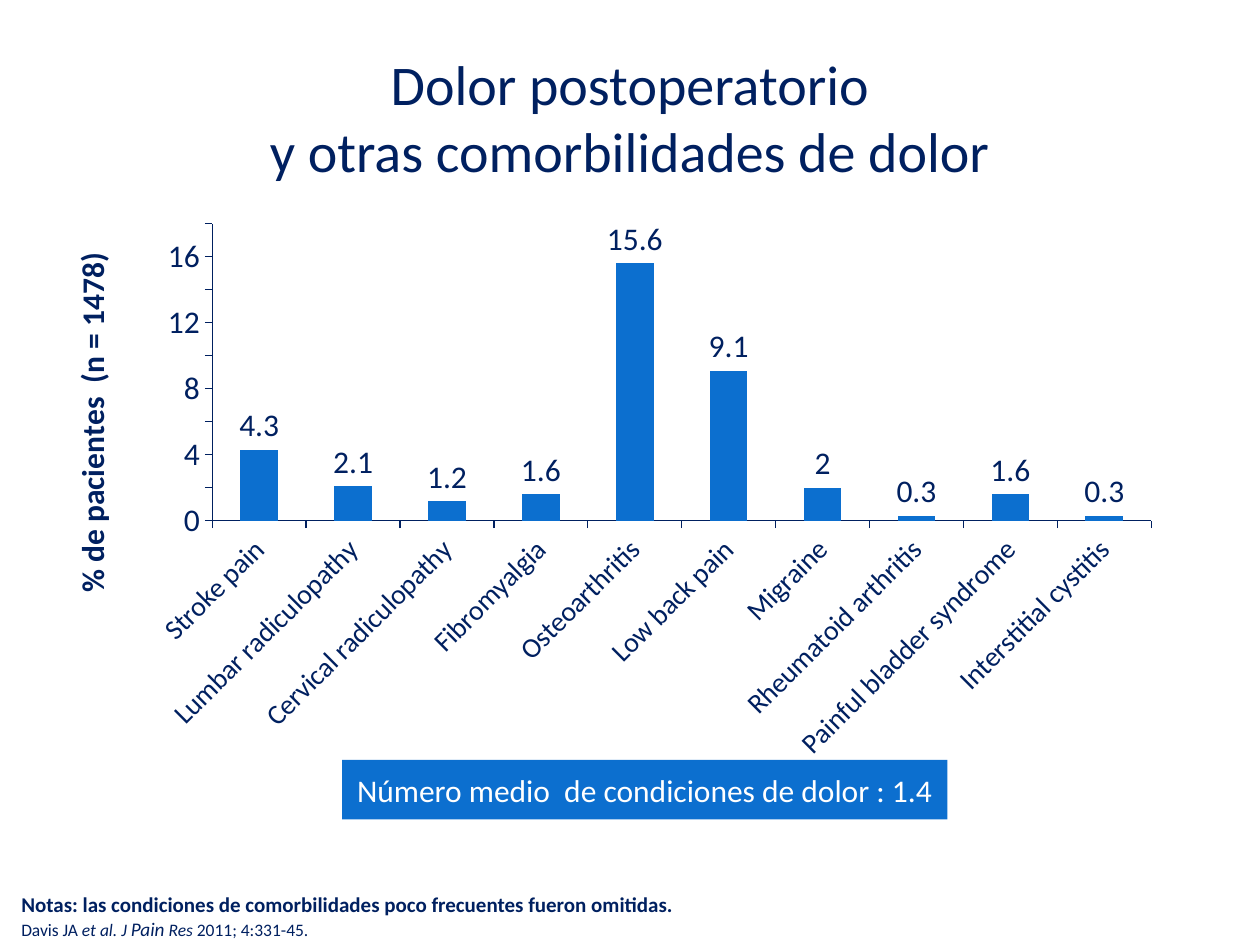
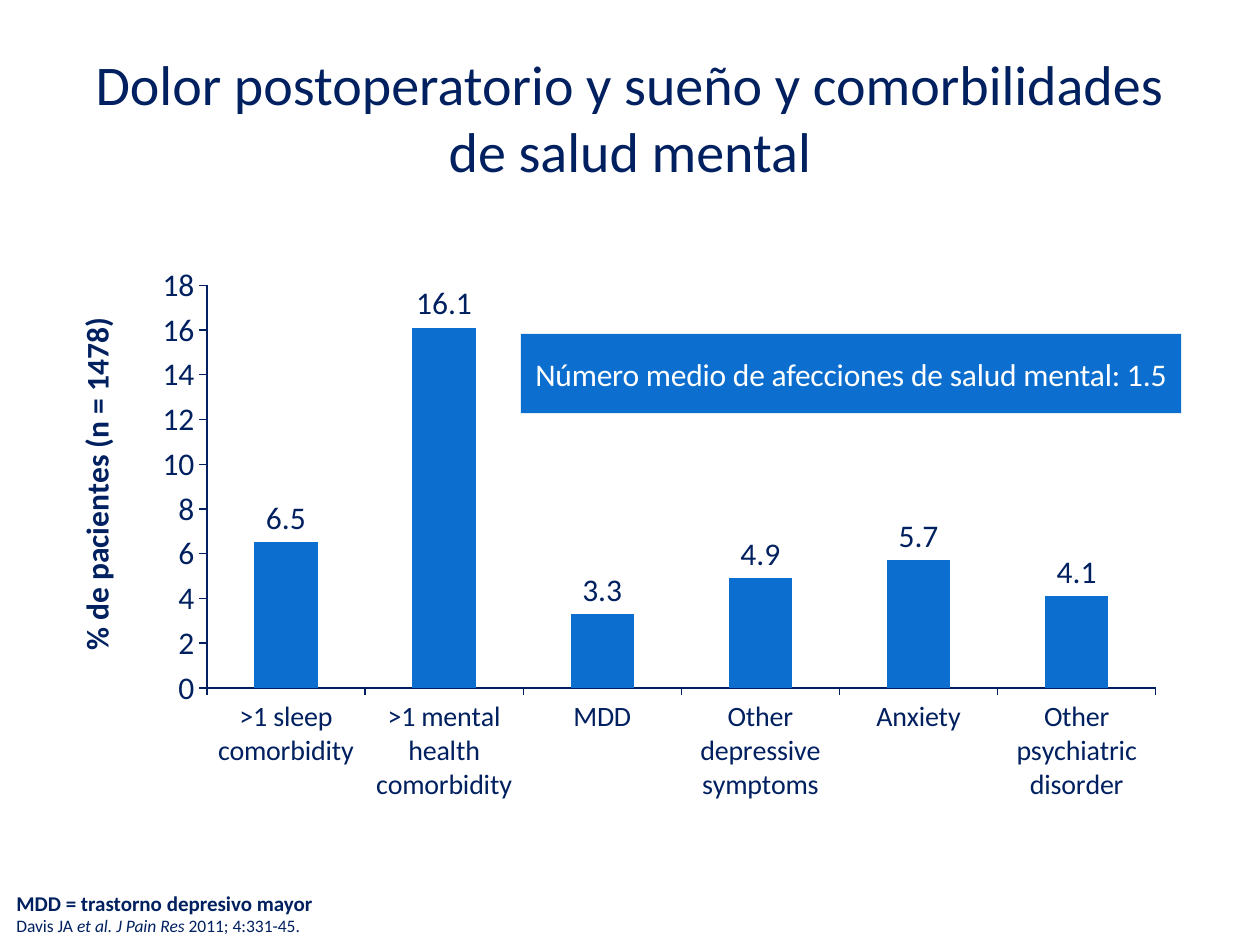
"""Build two bar-chart slides on pain after surgery and its comorbidities."""
from dataclasses import dataclass

from lxml.etree import SubElement as Sub
from pptx import Presentation as Deck
from pptx.chart.data import CategoryChartData as Data
from pptx.dml.color import RGBColor
from pptx.enum.chart import XL_CHART_TYPE as Kind
from pptx.enum.chart import XL_LABEL_POSITION as Spot
from pptx.enum.chart import XL_TICK_MARK as Tick
from pptx.enum.shapes import MSO_SHAPE as Form
from pptx.enum.text import MSO_ANCHOR as Anchor
from pptx.enum.text import MSO_AUTO_SIZE as Fit
from pptx.enum.text import PP_ALIGN as Align
from pptx.oxml.ns import qn
from pptx.util import Cm, Pt

NAVY = RGBColor(0x00, 0x20, 0x60)
BLUE = RGBColor(0x0C, 0x6F, 0xCF)
WHITE = RGBColor(0xFF, 0xFF, 0xFF)
FACE = "Calibri"
TOP = 18


@dataclass(frozen=True)
class Box:
    left: float
    top: float
    width: float = 0
    height: float = 0

    def cm(self) -> tuple:
        return tuple(Cm(n) for n in (self.left, self.top, self.width, self.height))


@dataclass(frozen=True)
class Graph:
    box: Box
    plot: Box
    label: str
    place: Box
    turn: int
    bars: dict


@dataclass(frozen=True)
class Piece:
    text: str
    size: int = 10
    bold: bool = False
    slant: bool = False


@dataclass(frozen=True)
class Page:
    title: str
    graph: Graph
    banner: str
    frame: Box
    space: int
    note: str
    source: tuple
    foot: Box


HEAD = Box(1.27, 0.76, 22.86, 3.18)
CITE = Piece("Davis JA ")
PAGES = (
    Page(
        "Dolor postoperatorio\vy otras comorbilidades de dolor",
        Graph(
            Box(1.24, 4.27, 22.4, 11.28),
            Box(3.04, 0.24, 18.93, 5.99),
            "% de pacientes  (n = 1478)",
            Box(0.06, 0.71),
            -45,
            {
                "Stroke pain": 4.3,
                "Lumbar radiculopathy": 2.1,
                "Cervical radiculopathy": 1.2,
                "Fibromyalgia": 1.6,
                "Osteoarthritis": 15.6,
                "Low back pain": 9.1,
                "Migraine": 2,
                "Rheumatoid arthritis": 0.3,
                "Painful bladder syndrome": 1.6,
                "Interstitial cystitis": 0.3,
            },
        ),
        "Número medio  de condiciones de dolor : 1.4",
        Box(6.9, 15.32, 12.2, 1.2),
        0,
        "Notas: las condiciones de comorbilidades poco frecuentes fueron omitidas.",
        (CITE, Piece("et al. J ", slant=True), Piece("Pain", 11, slant=True),
         Piece(" Res", slant=True), Piece(" 2011; 4:331-45.")),
        Box(0.43, 17.96, 24.28, 0.99),
    ),
    Page(
        "Dolor postoperatorio y sueño y comorbilidades de salud mental",
        Graph(
            Box(1.35, 5.13, 22.4, 11.28),
            Box(2.82, 0.62, 19.13, 8.12),
            "% de pacientes (n = 1478)",
            Box(0.04, 1.16),
            0,
            {
                ">1 sleep comorbidity": 6.5,
                ">1 mental health comorbidity": 16.1,
                "MDD": 3.3,
                "Other depressive symptoms": 4.9,
                "Anxiety": 5.7,
                "Other psychiatric disorder": 4.1,
            },
        ),
        "Número medio de afecciones de salud mental: 1.5",
        Box(10.5, 6.73, 13.31, 1.6),
        -10,
        "MDD = trastorno depresivo mayor",
        (CITE, Piece("et al. J Pain Res ", slant=True), Piece("2011; 4:331-45.")),
        Box(0.33, 17.94, 23.5, 0.94),
    ),
)


def style(font, size: float, color: RGBColor = NAVY, bold: bool = False) -> None:
    font.name, font.size, font.bold = FACE, Pt(size), bold
    font.color.rgb = color


def center(frame, size: float, color: RGBColor) -> None:
    frame.vertical_anchor = Anchor.MIDDLE
    for para in frame.paragraphs:
        para.alignment = Align.CENTER
        for run in para.runs:
            style(run.font, size, color)


def arrange(host, index: int, part: Box, whole: Box) -> None:
    for old in host.findall(qn("c:layout")):
        host.remove(old)
    lay = Sub(host, qn("c:layout"))
    host.insert(index, lay)
    man = Sub(lay, qn("c:manualLayout"))
    if part.width:
        Sub(man, qn("c:layoutTarget"), val="inner")
    for mode in ("xMode", "yMode"):
        Sub(man, qn(f"c:{mode}"), val="edge")
    spans = (whole.width, whole.height) * 2
    for key, size, span in zip("xywh", part.cm(), spans):
        if size:
            Sub(man, qn(f"c:{key}"), val=str(size / Cm(span)))


def draw_head(slide, text: str) -> None:
    title = slide.shapes.title
    title.left, title.top, title.width, title.height = HEAD.cm()
    title.text_frame.text = text
    title.text_frame.auto_size = Fit.NONE
    center(title.text_frame, 32, NAVY)


def draw_graph(slide, graph: Graph) -> None:
    data = Data()
    data.categories = list(graph.bars)
    data.add_series("Series 1", list(graph.bars.values()))
    chart = slide.shapes.add_chart(Kind.COLUMN_CLUSTERED, *graph.box.cm(), data).chart
    chart.has_title = chart.has_legend = False
    style(chart.font, 18)

    plot = chart.plots[0]
    plot.gap_width, plot.vary_by_categories = 150, False
    fill = plot.series[0].format.fill
    fill.solid()
    fill.fore_color.rgb = BLUE
    plot.has_data_labels = True
    labels = plot.data_labels
    labels.show_value, labels.position = True, Spot.OUTSIDE_END
    style(labels.font, 18)

    base, scale = chart.category_axis, chart.value_axis
    for axis, size in ((base, 16), (scale, 18)):
        axis.has_major_gridlines = False
        axis.major_tick_mark, axis.minor_tick_mark = Tick.OUTSIDE, Tick.NONE
        axis.format.line.color.rgb = NAVY
        axis.format.line.width = Pt(0.75)
        style(axis.tick_labels.font, size)
    scale.minimum_scale, scale.maximum_scale, scale.major_unit = 0, TOP, 2

    frame = scale.axis_title.text_frame
    frame.text = graph.label
    style(frame.paragraphs[0].runs[0].font, 18, bold=True)
    arrange(scale.axis_title.element, 1, graph.place, graph.box)
    arrange(chart.element.find(".//" + qn("c:plotArea")), 0, graph.plot, graph.box)
    turns = (("//c:catAx/c:txPr/a:bodyPr", graph.turn), ("//c:valAx/c:title//a:bodyPr", -90))
    for where, turn in turns:
        body = chart.element.xpath(where)[0]
        body.set("rot", str(turn * 60000))
        body.set("vert", "horz")


def draw_banner(slide, text: str, box: Box, space: int) -> None:
    shape = slide.shapes.add_shape(Form.RECTANGLE, *box.cm())
    shape.shadow.inherit = False
    shape.fill.solid()
    shape.fill.fore_color.rgb = BLUE
    shape.line.fill.background()
    frame = shape.text_frame
    frame.text = text
    frame.word_wrap = False
    center(frame, 18, WHITE)
    if space:
        frame.paragraphs[0].runs[0].font._element.set("spc", str(space))


def draw_foot(slide, page: Page) -> None:
    frame = slide.shapes.add_textbox(*page.foot.cm()).text_frame
    frame.word_wrap, frame.vertical_anchor = True, Anchor.BOTTOM
    frame.auto_size = Fit.SHAPE_TO_FIT_TEXT
    frame.margin_left = frame.margin_right = frame.margin_top = frame.margin_bottom = Cm(0)
    rows = ((Piece(page.note, 12, True),), page.source)
    for para, row in zip((frame.paragraphs[0], frame.add_paragraph()), rows):
        for piece in row:
            run = para.add_run()
            run.text = piece.text
            style(run.font, piece.size, bold=piece.bold)
            run.font.italic = piece.slant


def main() -> None:
    deck = Deck()
    deck.slide_width, deck.slide_height = Cm(25.4), Cm(19.05)
    for page in PAGES:
        slide = deck.slides.add_slide(deck.slide_layouts[5])
        draw_head(slide, page.title)
        draw_graph(slide, page.graph)
        draw_banner(slide, page.banner, page.frame, page.space)
        draw_foot(slide, page)
    deck.save("out.pptx")


if __name__ == "__main__":
    main()
